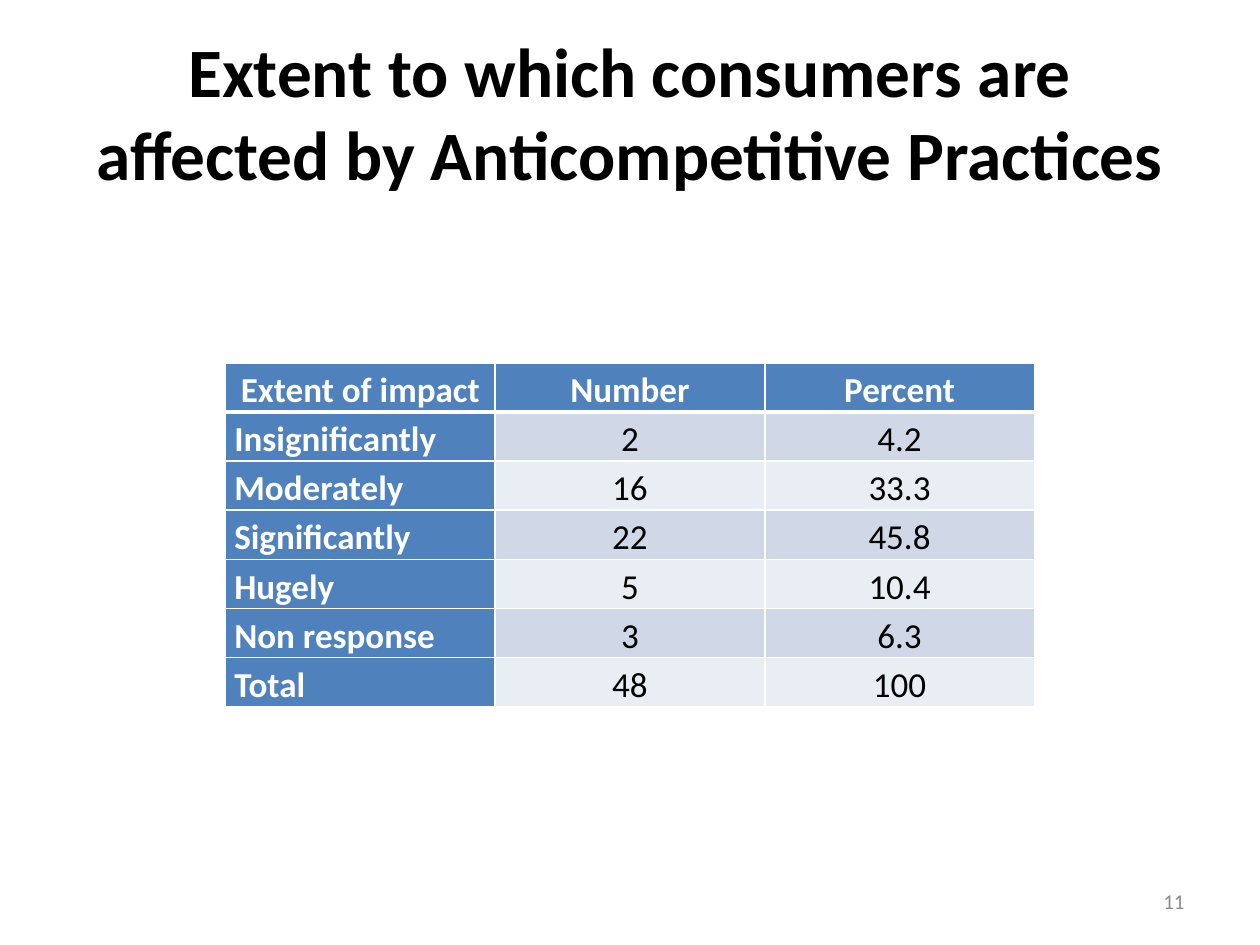
from lxml import etree
from pptx import Presentation
from pptx.dml.color import RGBColor
from pptx.enum.text import MSO_ANCHOR, PP_ALIGN
from pptx.oxml.ns import qn
from pptx.util import Inches, Pt

LEFT, CENTER, RIGHT = PP_ALIGN.LEFT, PP_ALIGN.CENTER, PP_ALIGN.RIGHT
MIDDLE = MSO_ANCHOR.MIDDLE
BLACK = RGBColor(0x00, 0x00, 0x00)
WHITE = RGBColor(0xFF, 0xFF, 0xFF)
GRAY = RGBColor(0x8C, 0x8C, 0x8C)
BLUE = RGBColor(0x4F, 0x81, 0xBD)
BANDS = (RGBColor(0xE9, 0xED, 0xF4), RGBColor(0xD0, 0xD8, 0xE8))

IMPACT_ROWS = [
    ("Extent of impact", "Number", "Percent"),
    ("Insignificantly", "2", "4.2"),
    ("Moderately", "16", "33.3"),
    ("Significantly", "22", "45.8"),
    ("Hugely", "5", "10.4"),
    ("Non response", "3", "6.3"),
    ("Total", "48", "100"),
]
COLUMN_WIDTH = 2.14
ROW_HEIGHT = 0.39


def set_attributes(target, values):
    """Set every attribute named in a dict of format values."""
    for name, value in values.items():
        setattr(target, name, value)


def write_text(text_frame, text, size, color, bold, alignment):
    """Write one formatted Calibri paragraph and return it."""
    paragraph = text_frame.paragraphs[0]
    paragraph.alignment = alignment
    run = paragraph.add_run()
    run.text = text
    set_attributes(run.font, {"name": "Calibri", "size": Pt(size), "bold": bold})
    run.font.color.rgb = color
    return paragraph


def add_text(slide, text, box, size, color, bold, alignment):
    """Add a wrapped, vertically centred text box."""
    shape = slide.shapes.add_textbox(*(Inches(length) for length in box))
    set_attributes(shape.text_frame, {"word_wrap": True, "vertical_anchor": MIDDLE})
    write_text(shape.text_frame, text, size, color, bold, alignment)


def add_borders(cell, bottom_width):
    """Draw white borders one point wide around a cell, with a chosen bottom width."""
    properties = cell._tc.get_or_add_tcPr()
    widths = {"a:lnL": 1, "a:lnR": 1, "a:lnT": 1, "a:lnB": bottom_width}
    for position, (side, width) in enumerate(widths.items()):
        line = etree.Element(qn(side), w=str(Pt(width)))
        fill = etree.SubElement(line, qn("a:solidFill"))
        etree.SubElement(fill, qn("a:srgbClr"), val=str(WHITE))
        properties.insert(position, line)


def format_cell(cell, text, row, column):
    """Fill a cell and write its text by its place in the table."""
    is_label = row == 0 or column == 0
    set_attributes(cell, {
        "margin_left": Inches(0.07), "margin_right": Inches(0.07),
        "margin_top": 0, "margin_bottom": 0,
    })
    cell.fill.solid()
    cell.fill.fore_color.rgb = BLUE if is_label else BANDS[row % 2]
    alignment = LEFT if column == 0 and row > 0 else CENTER
    color = WHITE if is_label else BLACK
    paragraph = write_text(cell.text_frame, text, 20, color, is_label, alignment)
    paragraph.line_spacing = 1.15
    add_borders(cell, 3 if row == 0 else 1)


def add_impact_table(slide, left, top):
    """Add the table of impact levels."""
    row_count, column_count = len(IMPACT_ROWS), len(IMPACT_ROWS[0])
    table = slide.shapes.add_table(
        row_count, column_count, Inches(left), Inches(top),
        Inches(COLUMN_WIDTH * column_count), Inches(ROW_HEIGHT * row_count),
    ).table
    table.first_col = True
    for row, texts in enumerate(IMPACT_ROWS):
        for column, text in enumerate(texts):
            format_cell(table.cell(row, column), text, row, column)


def main():
    """Build and save the slide."""
    presentation = Presentation()
    set_attributes(presentation, {"slide_width": Inches(10), "slide_height": Inches(7.5)})
    slide = presentation.slides.add_slide(presentation.slide_layouts[6])
    add_text(slide, "Extent to which consumers are affected by Anticompetitive Practices",
             (0.5, 0.17, 9, 1.42), 39.6, BLACK, True, CENTER)
    add_impact_table(slide, 1.79, 2.88)
    add_text(slide, "11", (7.17, 6.95, 2.33, 0.4), 12, GRAY, False, RIGHT)
    presentation.save("out.pptx")


if __name__ == "__main__":
    main()
